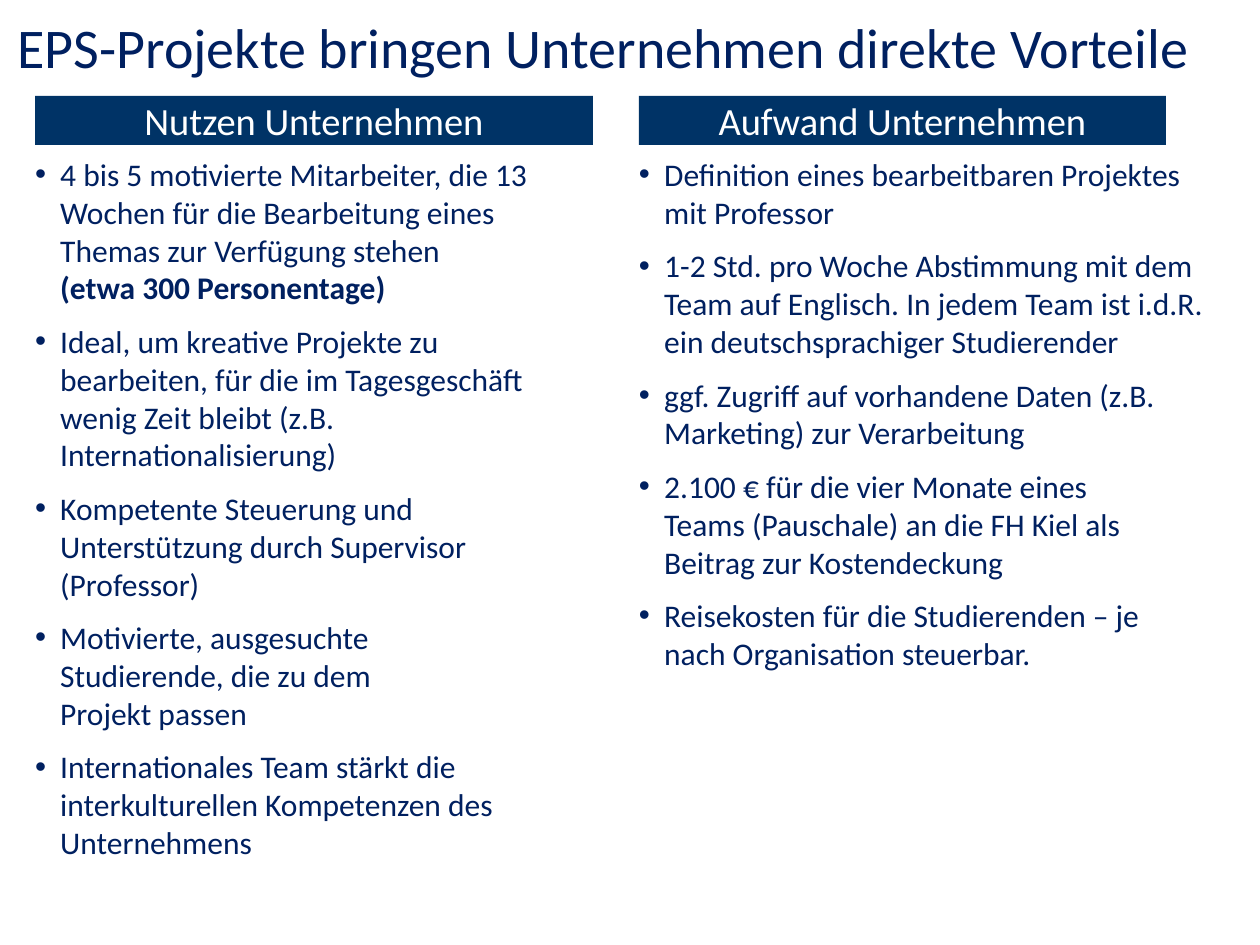
from dataclasses import dataclass

from pptx import Presentation
from pptx.dml.color import RGBColor
from pptx.enum.shapes import MSO_SHAPE
from pptx.enum.text import MSO_ANCHOR, MSO_AUTO_SIZE, PP_ALIGN
from pptx.slide import Slide
from pptx.util import Emu, Inches, Pt

NAVY = RGBColor(0x00, 0x20, 0x60)
BAR_BLUE = RGBColor(0x00, 0x33, 0x66)
WHITE = RGBColor(0xFF, 0xFF, 0xFF)

BENEFITS = [
    ("4 bis 5 motivierte Mitarbeiter, die 13 Wochen für die Bearbeitung eines "
     "Themas zur Verfügung stehen", "(etwa 300 Personentage)"),
    ("Ideal, um kreative Projekte zu bearbeiten, für die im Tagesgeschäft "
     "wenig Zeit bleibt (z.B. Internationalisierung)", ""),
    ("Kompetente Steuerung und Unterstützung durch Supervisor (Professor)", ""),
    ("Motivierte, ausgesuchte\vStudierende, die zu dem\vProjekt passen", ""),
    ("Internationales Team stärkt die interkulturellen Kompetenzen des "
     "Unternehmens", ""),
]
EFFORTS = [
    ("Definition eines bearbeitbaren Projektes mit Professor", ""),
    ("1-2 Std. pro Woche Abstimmung mit dem Team auf Englisch. In jedem Team "
     "ist i.d.R. ein deutschsprachiger Studierender", ""),
    ("ggf. Zugriff auf vorhandene Daten (z.B. Marketing) zur Verarbeitung", ""),
    ("2.100 € für die vier Monate eines\vTeams (Pauschale) an die FH Kiel als "
     "Beitrag zur Kostendeckung", ""),
    ("Reisekosten für die Studierenden – je nach Organisation steuerbar.", ""),
]


@dataclass
class SlideBuilder:
    """Hold the style and the current slide."""

    page: Slide
    font: str = "Calibri"
    scale: float = 914400 / 126

    def place(self, shape, left, top, width, height):
        """Move and size a shape in px."""
        shape.left, shape.top, shape.width, shape.height = (
            Emu(round(length * self.scale)) for length in (left, top, width, height))

    def style(self, paragraph, size, color):
        """Set the font of a paragraph."""
        paragraph.font.name = self.font
        paragraph.font.size = Pt(size)
        paragraph.font.color.rgb = color

    def clear_margins(self, frame):
        """Remove the insets of a text frame."""
        frame.margin_left = frame.margin_top = 0
        frame.margin_right = frame.margin_bottom = 0

    def title(self, text, *area):
        """Fill the title placeholder."""
        box = self.page.shapes.title
        self.place(box, *area)
        frame = box.text_frame
        frame.text = text
        frame.auto_size = MSO_AUTO_SIZE.NONE
        frame.vertical_anchor = MSO_ANCHOR.MIDDLE
        paragraph = frame.paragraphs[0]
        paragraph.alignment = PP_ALIGN.LEFT
        self.style(paragraph, 32, NAVY)

    def bar(self, text, *area):
        """Add a filled column heading."""
        box = self.page.shapes.add_shape(MSO_SHAPE.RECTANGLE, 0, 0, 0, 0)
        self.place(box, *area)
        box.shadow.inherit = False
        box.fill.solid()
        box.fill.fore_color.rgb = BAR_BLUE
        box.line.fill.background()
        frame = box.text_frame
        self.clear_margins(frame)
        frame.word_wrap = False
        frame.vertical_anchor = MSO_ANCHOR.MIDDLE
        frame.text = text
        paragraph = frame.paragraphs[0]
        paragraph.alignment = PP_ALIGN.CENTER
        self.style(paragraph, 22, WHITE)

    def bullets(self, index, items, *area):
        """Fill a body placeholder with a bulleted list."""
        box = self.page.placeholders[index]
        self.place(box, *area)
        frame = box.text_frame
        self.clear_margins(frame)
        frame.word_wrap = True
        frame.auto_size = MSO_AUTO_SIZE.NONE
        for number, (text, strong) in enumerate(items):
            paragraph = frame.add_paragraph() if number else frame.paragraphs[0]
            paragraph.text = text
            if strong:
                paragraph.add_line_break()
                span = paragraph.add_run()
                span.text = strong
                span.font.bold = True
            properties = paragraph._p.get_or_add_pPr()
            properties.set("marL", str(Inches(0.2)))
            properties.set("indent", str(-Inches(0.2)))
            paragraph.space_before = Pt(9 if number else 0)
            self.style(paragraph, 18, NAVY)


def main():
    """Build and save the deck."""
    deck = Presentation()
    deck.slide_width, deck.slide_height = Inches(10), Inches(7.5)
    builder = SlideBuilder(deck.slides.add_slide(deck.slide_layouts[3]))
    builder.title("EPS-Projekte bringen Unternehmen direkte Vorteile", 5, -33, 1240, 158)
    columns = [
        ("Nutzen Unternehmen", BENEFITS, 35, 558, 556, 725),
        ("Aufwand Unternehmen", EFFORTS, 639, 527, 568, 546),
    ]
    for index, (heading, items, left, bar_width, width, height) in enumerate(columns, 1):
        builder.bar(heading, left, 96, bar_width, 49)
        builder.bullets(index, items, left, 155, width, height)
    deck.save("out.pptx")


if __name__ == "__main__":
    main()
